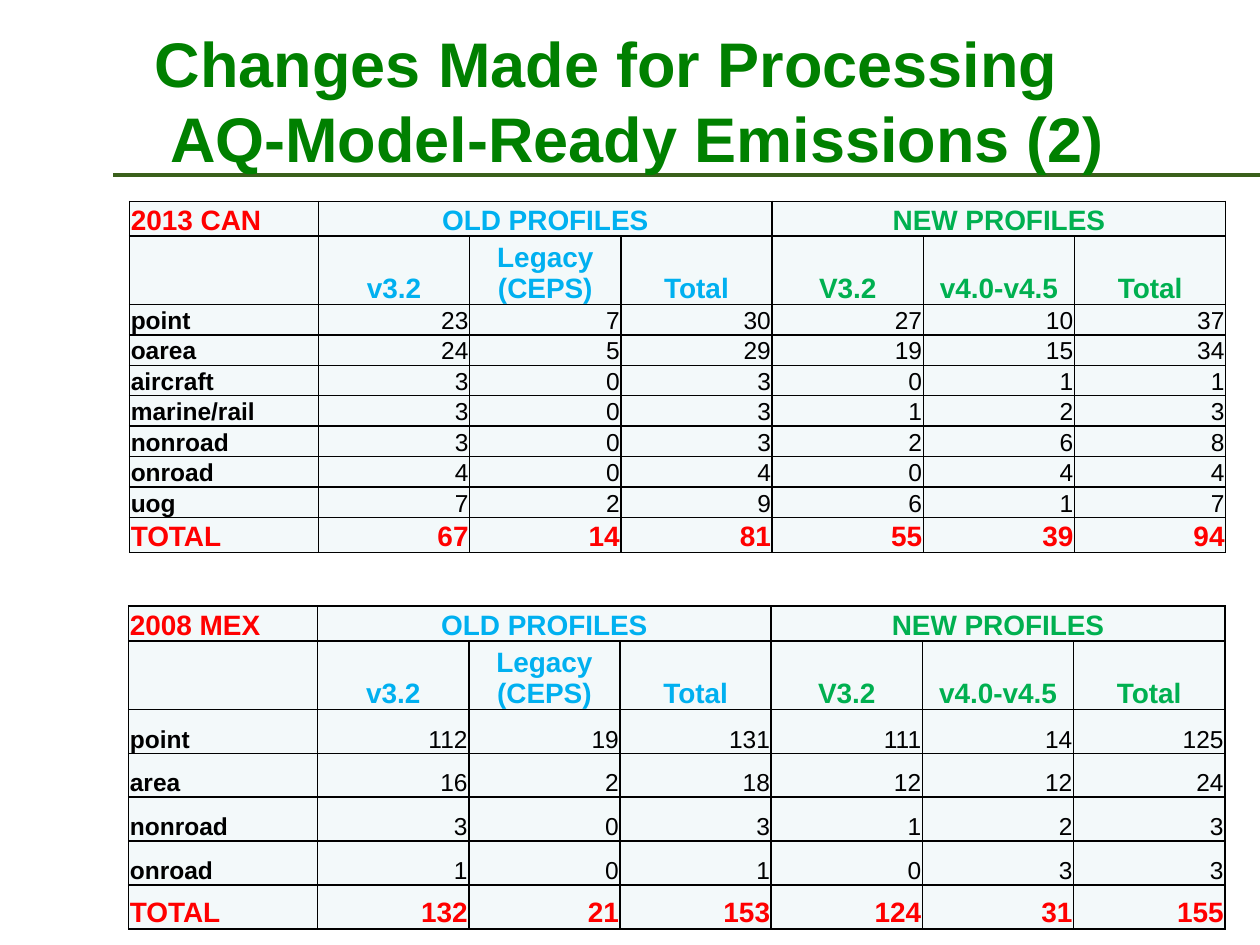
from lxml import etree
from pptx import Presentation
from pptx.dml.color import RGBColor
from pptx.enum import shapes, text
from pptx.oxml import ns, parse_xml
from pptx.util import Pt

HUES = dict(title="008000", rule="3A601B", total="FF0000", old="00B0F0",
            new="00B050", body="000000", edge="000000", cell="F3F9FA")
LEFT, MID, RIGHT = (text.PP_ALIGN.LEFT, text.PP_ALIGN.CENTER, text.PP_ALIGN.RIGHT)
WIDTHS = [108] + [86.4] * 6
CANADA = [
    ("point", 23, 7, 30, 27, 10, 37),
    ("oarea", 24, 5, 29, 19, 15, 34),
    ("aircraft", 3, 0, 3, 0, 1, 1),
    ("marine/rail", 3, 0, 3, 1, 2, 3),
    ("nonroad", 3, 0, 3, 2, 6, 8),
    ("onroad", 4, 0, 4, 0, 4, 4),
    ("uog", 7, 2, 9, 6, 1, 7),
    ("TOTAL", 67, 14, 81, 55, 39, 94),
]
MEXICO = [
    ("point", 112, 19, 131, 111, 14, 125),
    ("area", 16, 2, 18, 12, 12, 24),
    ("nonroad", 3, 0, 3, 1, 2, 3),
    ("onroad", 1, 0, 1, 0, 3, 3),
    ("TOTAL", 132, 21, 153, 124, 31, 155),
]


def paint(para, hue, size, bold):
    """Format every run of a paragraph."""
    for run in para.runs:
        looks = dict(name="Arial", size=Pt(size), bold=bold)
        for key, value in looks.items():
            setattr(run.font, key, value)
        run.font.color.rgb = RGBColor.from_string(HUES[hue])


def frame(cell):
    """Give a cell its borders, margins and fill."""
    props = cell._tc.get_or_add_tcPr()
    for side in "LRTB":
        props.append(parse_xml(
            f'<a:ln{side} {ns.nsdecls("a")} w="{Pt(1)}"><a:solidFill>'
            f'<a:srgbClr val="{HUES["edge"]}"/></a:solidFill></a:ln{side}>'))
    looks = dict(margin_left=Pt(0.72), margin_right=Pt(0.72), margin_top=Pt(0.72),
                 margin_bottom=0, vertical_anchor=text.MSO_ANCHOR.BOTTOM)
    for key, value in looks.items():
        setattr(cell, key, value)
    cell.fill.solid()
    cell.fill.fore_color.rgb = RGBColor.from_string(HUES["cell"])


def style(row, col, name):
    """Return hue, size, weight and alignment for a cell."""
    if row < 2:
        hue = "total" if col == 0 else "old" if col < 4 else "new"
        return hue, 16, True, MID if col else LEFT
    side = RIGHT if col else LEFT
    if name == "TOTAL":
        return "total", 16, True, side
    return "body", 14, col == 0, side


def grid(slide, box, name, legacy, data, steps):
    """Place a table of profile counts in its box."""
    rows = [(name, "OLD PROFILES", "", "", "NEW PROFILES", "", ""),
            ("", "v3.2", legacy, "Total", "V3.2", "v4.0-v4.5", "Total"), *data]
    shape = slide.shapes.add_table(len(rows), len(WIDTHS), *map(Pt, box))
    table = shape.table
    table.first_row = table.horz_banding = False
    for col, width in zip(table.columns, WIDTHS):
        col.width = Pt(width)
    for row, step in zip(table.rows, steps):
        row.height = Pt(step)
    for r, row in enumerate(rows):
        for c, value in enumerate(row):
            cell = table.cell(r, c)
            frame(cell)
            cell.text = str(value)
            hue, size, bold, side = style(r, c, row[0])
            for para in cell.text_frame.paragraphs:
                para.alignment = side
                paint(para, hue, size, bold)
    for col in (1, 4):
        table.cell(0, col).merge(table.cell(0, col + 2))


def rule(slide, left, top, right):
    """Draw the line below the title."""
    line = slide.shapes.add_connector(
        shapes.MSO_CONNECTOR.STRAIGHT, Pt(left), Pt(top), Pt(right), Pt(top))
    line.line.width = Pt(2.25)
    line.line.color.rgb = RGBColor.from_string(HUES["rule"])
    etree.SubElement(line._element.spPr, ns.qn("a:effectLst"))


def title(slide, box):
    """Place the two-line title with a shifted second line."""
    area = slide.shapes.add_textbox(*map(Pt, box)).text_frame
    area.word_wrap = True
    area.margin_top = Pt(5.5)
    para = area.paragraphs[0]
    para.text = "Changes Made for Processing\vAQ-Model-Ready Emissions (2)"
    para.line_spacing = Pt(43)
    props = para._p.get_or_add_pPr()
    props.set("marL", str(Pt(36.8)))
    props.set("indent", str(Pt(-8.7)))
    paint(para, "title", 36, True)


def main():
    """Build and save the slide."""
    deck = Presentation()
    deck.slide_width, deck.slide_height = Pt(720), Pt(540)
    slide = deck.slides.add_slide(deck.slide_layouts[6])
    rule(slide, 64.8, 100, 720)
    grid(slide, (74, 115, 626.4, 200.8), "2013 CAN", "Legacy\n(CEPS)",
         CANADA, [20, 39] + [17.4] * 7 + [20])
    grid(slide, (73.5, 346.4, 626.4, 184.5), "2008 MEX", "Legacy (CEPS)",
         MEXICO, [20, 39] + [25.1] * 5)
    title(slide, (53.3, 8.6, 658, 94.3))
    deck.save("out.pptx")


if __name__ == "__main__":
    main()
